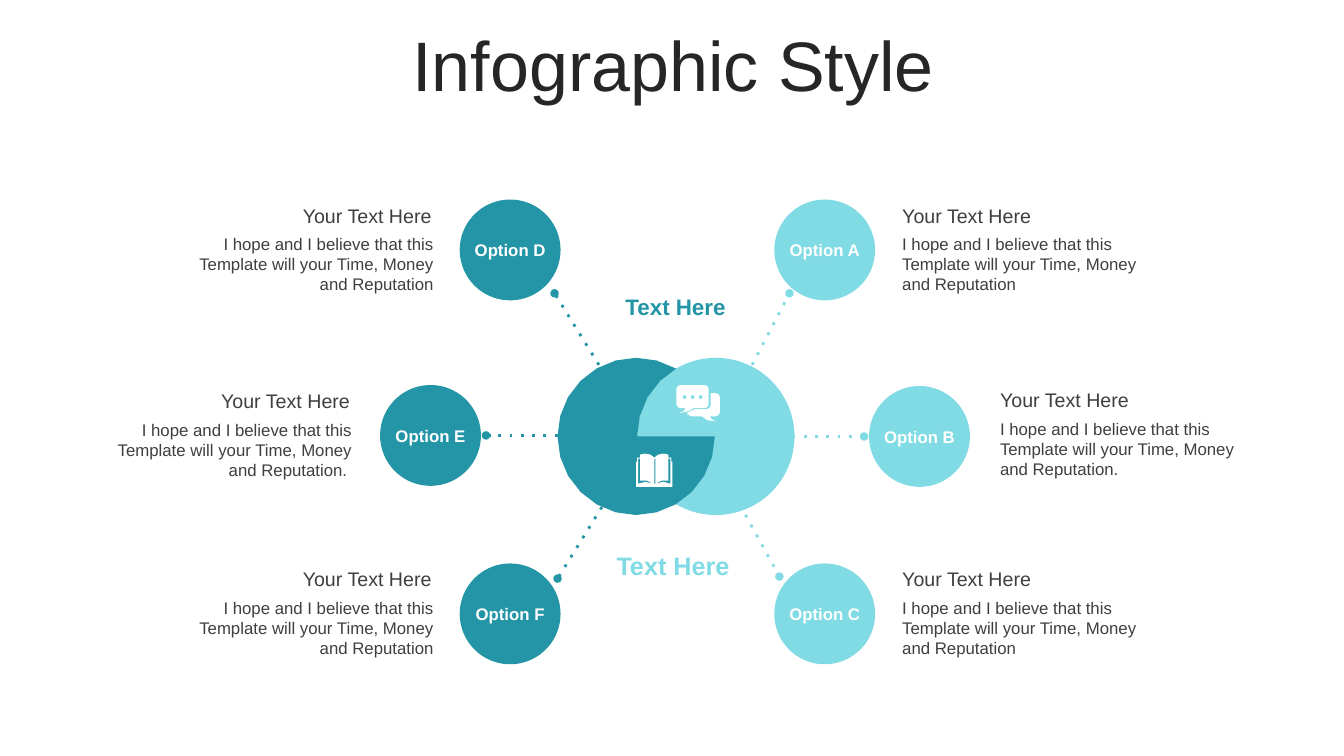
from dataclasses import dataclass
from math import cos, radians, sin

from lxml import etree
from pptx import Presentation
from pptx.dml.color import RGBColor
from pptx.enum.shapes import MSO_CONNECTOR, MSO_SHAPE
from pptx.enum.text import MSO_ANCHOR, MSO_AUTO_SIZE, PP_ALIGN
from pptx.oxml.ns import qn
from pptx.util import Inches, Pt

OVAL, LINE = MSO_SHAPE.OVAL, MSO_CONNECTOR.STRAIGHT
LEFT, MID, RIGHT = PP_ALIGN.LEFT, PP_ALIGN.CENTER, PP_ALIGN.RIGHT
MIDDLE, GROW = MSO_ANCHOR.MIDDLE, MSO_AUTO_SIZE.SHAPE_TO_FIT_TEXT
COLS, ROWS = 13.33, 7.5


@dataclass(frozen=True)
class Theme:
    font: str = "Arial"
    dark: str = "2395A6"
    light: str = "80DBE4"
    ink: str = "262626"
    text: str = "3F3F3F"
    white: str = "FFFFFF"
    title: int = 50
    large: int = 18
    mid: int = 16
    head: int = 14
    body: int = 12


class Board:
    """Draws styled elements on one slide, on a grid of one-inch cells."""

    def __init__(self, deck, theme):
        self.theme = theme
        self.slide = deck.slides.add_slide(deck.slide_layouts[5])
        self.shapes = self.slide.shapes

    def style(self, para, size, color, align, bold=False):
        para.alignment = align
        font = para.font
        font.name, font.size, font.bold = self.theme.font, Pt(size), bold
        font.color.rgb = RGBColor.from_string(color)

    def paint(self, shape, color):
        shape.shadow.inherit = False
        shape.fill.solid()
        shape.fill.fore_color.rgb = RGBColor.from_string(color)
        shape.line.fill.background()

    def title(self, text, x, y, w, h):
        box = self.shapes.title
        box.left, box.top, box.width, box.height = map(Inches, (x, y, w, h))
        frame = box.text_frame
        frame.text, frame.vertical_anchor = text, MIDDLE
        para = frame.paragraphs[0]
        para.line_spacing = 0.8
        self.style(para, self.theme.title, self.theme.ink, MID)

    def text(self, text, x, y, w, h, size, color, align, bold=False):
        frame = self.shapes.add_textbox(*map(Inches, (x, y, w, h))).text_frame
        frame.word_wrap, frame.auto_size = True, GROW
        frame.text = text
        self.style(frame.paragraphs[0], size, color, align, bold)

    def disc(self, x, y, r, color):
        area = map(Inches, (x - r, y - r, 2 * r, 2 * r))
        self.paint(self.shapes.add_shape(OVAL, *area), color)

    def link(self, start, end, color):
        line = self.shapes.add_connector(LINE, *map(Inches, start + end))
        line.line.width = Pt(2)
        line.line.color.rgb = RGBColor.from_string(color)
        props = line.line._get_or_add_ln()
        etree.SubElement(props, qn("a:prstDash"), val="dot")
        etree.SubElement(props, qn("a:tailEnd"), type="oval")
        etree.SubElement(props.getparent(), qn("a:effectLst"))

    def form(self, loops, color):
        loops = [[(Inches(x), Inches(y)) for x, y in loop] for loop in loops]
        pen = self.shapes.build_freeform(*loops[0][0], scale=1.0)
        pen.add_line_segments(loops[0][1:], close=True)
        for loop in loops[1:]:
            pen.move_to(*loop[0])
            pen.add_line_segments(loop[1:], close=True)
        self.paint(pen.convert_to_shape(), color)


def arc(x, y, r, start, end, steps=2):
    """Return points along a circle, with angles in degrees clockwise."""
    turns = [radians(start + (end - start) * i / steps) for i in range(steps + 1)]
    return [(x + r * cos(turn), y + r * sin(turn)) for turn in turns]


def flip(loop, axis):
    """Return a loop mirrored about an upright axis, in reverse order."""
    return [(2 * axis - x, y) for x, y in reversed(loop)]


def book():
    """Return the loops of the open book."""
    axis = 6.49
    cover = [(axis, 4.54), (6.53, 4.51), (6.58, 4.5), (6.63, 4.51), (6.63, 4.54),
             (6.66, 4.54), (6.66, 4.58), (6.67, 4.58), (6.67, 4.83)]
    page = [(6.63, 4.55), (6.65, 4.55), (6.65, 4.8), (6.58, 4.78),
            (6.5, 4.8), (6.56, 4.77), (6.63, 4.77)]
    spine = [(axis, 4.55), (6.5, 4.55), (6.5, 4.8), (axis, 4.8)]
    return [cover + flip(cover[1:], axis), page, flip(page, axis), spine]


def chat():
    """Return the loops of the two speech bubbles."""
    r = 0.04
    front = (arc(6.75, 3.86, r, 180, 270) + arc(6.99, 3.86, r, 270, 360)
             + arc(6.99, 4.01, r, 0, 90)
             + [(6.88, 4.05), (6.83, 4.08), (6.73, 4.1), (6.78, 4.08), (6.8, 4.05)]
             + arc(6.75, 4.01, r, 90, 180))
    back = ([(7.05, 3.9)] + arc(7.1, 3.94, r, 270, 360) + arc(7.1, 4.09, r, 0, 90)
            + [(7.04, 4.13), (7.06, 4.16), (7.1, 4.18), (7.02, 4.17), (6.96, 4.13),
               (6.85, 4.13), (6.81, 4.1), (6.89, 4.06), (7, 4.06)]
            + arc(7.01, 4.02, r, 90, 0))
    dots = [arc(6.79 + 0.08 * i, 3.94, 0.02, 360, 45, 7) for i in range(3)]
    return [front, back] + dots


def main():
    """Build the slide and save it."""
    deck = Presentation()
    deck.slide_width, deck.slide_height = Inches(COLS), Inches(ROWS)
    look = Theme()
    board = Board(deck, look)
    board.title("Infographic Style", 0.35, 0.31, 12.66, 0.79)

    r, mid, west, east = 0.78, 4.33, 6.31, 7.1
    board.disc(east, mid, r, look.light)
    swirl = arc(west, mid, r, 0, 300, 20) + arc(east, mid, r, 240, 180, 4)
    board.form([swirl], look.dark)
    board.form(book(), look.white)
    board.form(chat(), look.white)
    board.text("Text Here", 6.06, 2.86, 1.28, 0.37, look.mid, look.dark, MID, True)
    board.text("Text Here", 6, 5.41, 1.35, 0.4, look.large, look.light, MID, True)

    note = "I hope and I believe that this Template will your Time, Money and Reputation"
    dark, light = (look.dark, RIGHT), (look.light, LEFT)
    items = [
        ("A", 8.18, 2.48, 8.85, 1.97, "", (7.46, 3.62), (7.83, 2.91), light),
        ("B", 9.12, 4.33, 9.82, 3.8, ".", (7.86, 4.33), (8.57, 4.33), light),
        ("C", 8.18, 6.09, 8.85, 5.58, "", (7.34, 5.01), (7.73, 5.72), light),
        ("D", 5.06, 2.48, 1.83, 1.97, "", (5.94, 3.62), (5.5, 2.91), dark),
        ("E", 4.27, 4.32, 1.02, 3.81, ". ", (5.53, 4.32), (4.82, 4.32), dark),
        ("F", 5.06, 6.09, 1.83, 5.58, "", (5.97, 5.03), (5.53, 5.74), dark),
    ]
    for name, x, y, left, top, stop, start, end, (color, align) in items:
        board.disc(x, y, 0.5, color)
        board.text(f"Option {name}", x - 0.47, y - 0.15, 0.94, 0.3,
                   look.body, look.white, MID, True)
        board.link(start, end, color)
        board.text("Your Text Here", left, top, 2.55, 0.34,
                   look.head, look.text, align)
        board.text(note + stop, left, top + 0.3, 2.57, 0.71,
                   look.body, look.text, align)
    deck.save("out.pptx")


if __name__ == "__main__":
    main()
